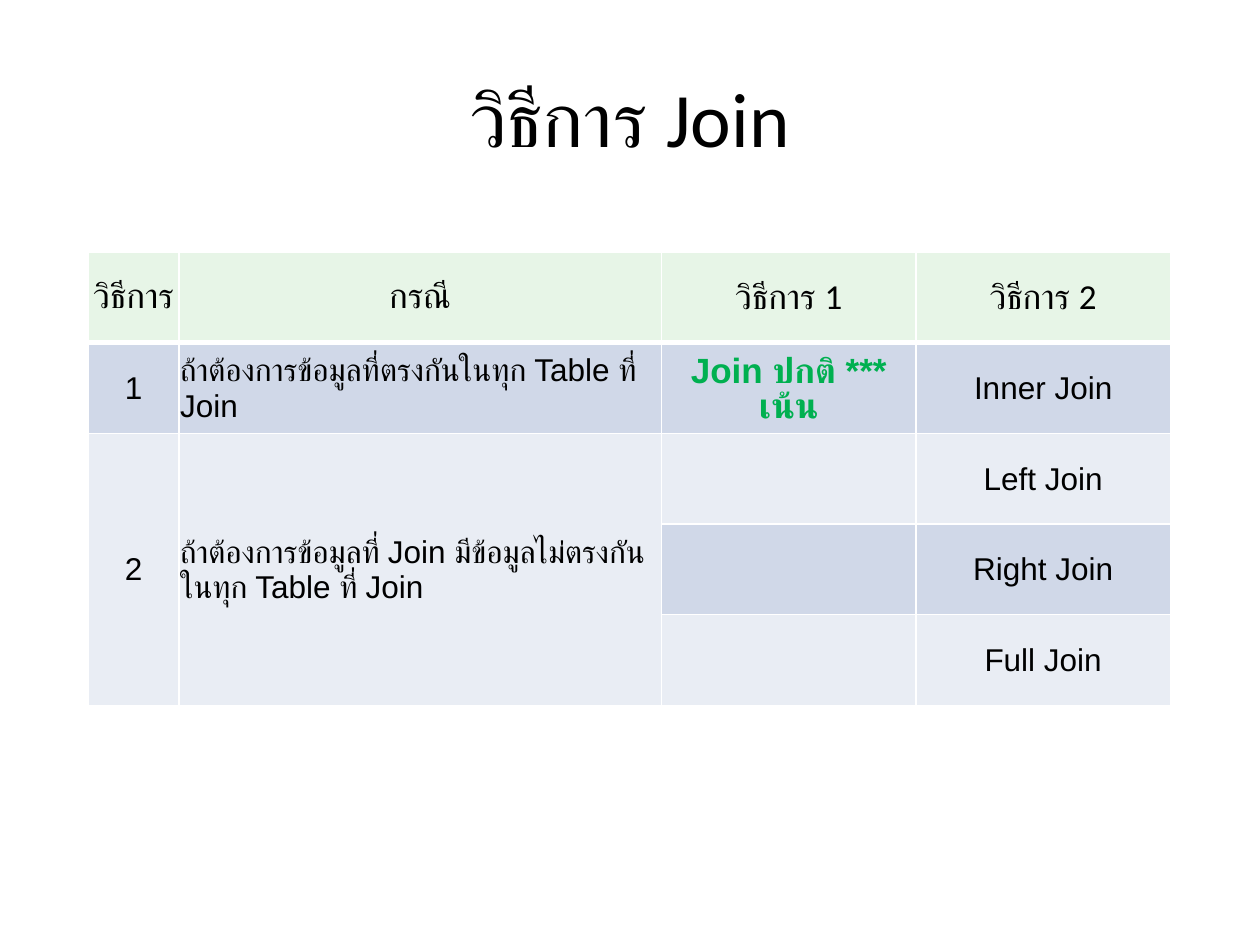
from lxml.etree import SubElement
from pptx import Presentation
from pptx.dml.color import RGBColor
from pptx.enum.text import MSO_ANCHOR as Anchor, PP_ALIGN as Align
from pptx.oxml.ns import qn
from pptx.util import Inches, Pt

BLACK = RGBColor(0x00, 0x00, 0x00)
GREEN = RGBColor(0x00, 0xB0, 0x50)
WHITE = RGBColor(0xFF, 0xFF, 0xFF)
HEADER_FILL = RGBColor(0xE7, 0xF5, 0xE7)
BAND_FILLS = [RGBColor(0xE9, 0xED, 0xF4), RGBColor(0xD0, 0xD8, 0xE8)]

TITLE = {"name": "Calibri", "size": Pt(44), "bold": False}
HEADER = {"name": "Calibri", "size": Pt(20), "bold": False}
BODY = {"name": "Arial", "size": Pt(18), "bold": False}
EMPHASIS = {"name": "Arial", "size": Pt(20), "bold": True}

COLUMN_WIDTHS = [0.72, 3.83, 2.02, 2.02]
ROW_HEIGHT = 0.72
CASE_COLUMN = 1
EMPHASIS_CELL = (1, 2)
ROWS = [
    ["วิธีการ", "กรณี", "วิธีการ 1", "วิธีการ 2"],
    ["1", "ถ้าต้องการข้อมูลที่ตรงกันในทุก Table ที่ Join", "Join ปกติ *** เน้น", "Inner Join"],
    ["2", "ถ้าต้องการข้อมูลที่ Join มีข้อมูลไม่ตรงกันในทุก Table ที่ Join", "", "Left Join"],
    ["", "", "", "Right Join"],
    ["", "", "", "Full Join"],
]


def write_text(frame, text, font_format, color=BLACK, align=Align.CENTER):
    paragraph = frame.paragraphs[0]
    paragraph.alignment = align
    # An empty cell keeps its size on the paragraph
    target = paragraph.add_run() if text else paragraph
    if text:
        target.text = text
    for name, value in font_format.items():
        setattr(target.font, name, value)
    target.font.color.rgb = color


def set_borders(cell, bottom_width):
    properties = cell._tc.get_or_add_tcPr()
    widths = {"a:lnL": 1, "a:lnR": 1, "a:lnT": 1, "a:lnB": bottom_width}
    for position, (tag, width) in enumerate(widths.items()):
        line = SubElement(properties, qn(tag), w=str(Pt(width)))
        fill = SubElement(line, qn("a:solidFill"))
        SubElement(fill, qn("a:srgbClr"), val=str(WHITE))
        # Borders come before the cell fill
        properties.insert(position, line)


def add_title(slide, left, top, width, height):
    box = slide.shapes.add_textbox(Inches(left), Inches(top), Inches(width), Inches(height))
    frame = box.text_frame
    frame.word_wrap = True
    frame.vertical_anchor = Anchor.MIDDLE
    write_text(frame, "วิธีการ Join", TITLE)


def format_cell(cell, row, column, text):
    is_header = row == 0
    cell_format = {
        "vertical_anchor": Anchor.MIDDLE,
        "margin_left": Inches(0.01),
        "margin_top": Inches(0.01),
        "margin_right": Inches(0.01),
        "margin_bottom": 0,
    }
    for name, value in cell_format.items():
        setattr(cell, name, value)
    cell.fill.solid()
    cell.fill.fore_color.rgb = HEADER_FILL if is_header else BAND_FILLS[row % 2]
    set_borders(cell, 3 if is_header else 1)

    if is_header:
        write_text(cell.text_frame, text, HEADER)
    elif (row, column) == EMPHASIS_CELL:
        write_text(cell.text_frame, text, EMPHASIS, GREEN)
    else:
        align = Align.LEFT if column == CASE_COLUMN else Align.CENTER
        write_text(cell.text_frame, text, BODY, align=align)


def add_join_table(slide, left, top, width, height):
    frame = slide.shapes.add_table(
        len(ROWS), len(COLUMN_WIDTHS), Inches(left), Inches(top), Inches(width), Inches(height)
    )
    table = frame.table
    for column, column_width in zip(table.columns, COLUMN_WIDTHS):
        column.width = Inches(column_width)
    for row in table.rows:
        row.height = Inches(ROW_HEIGHT)

    for row, texts in enumerate(ROWS):
        for column, text in enumerate(texts):
            format_cell(table.cell(row, column), row, column, text)

    # The second method covers the last three rows
    for column in (0, CASE_COLUMN):
        table.cell(2, column).merge(table.cell(4, column))


def main():
    presentation = Presentation()
    presentation.slide_width = Inches(10)
    presentation.slide_height = Inches(7.5)
    slide = presentation.slides.add_slide(presentation.slide_layouts[6])
    add_title(slide, 0.5, 0.3, 9, 1.25)
    add_join_table(slide, 0.7, 2, sum(COLUMN_WIDTHS), ROW_HEIGHT * len(ROWS))
    presentation.save("out.pptx")


if __name__ == "__main__":
    main()
